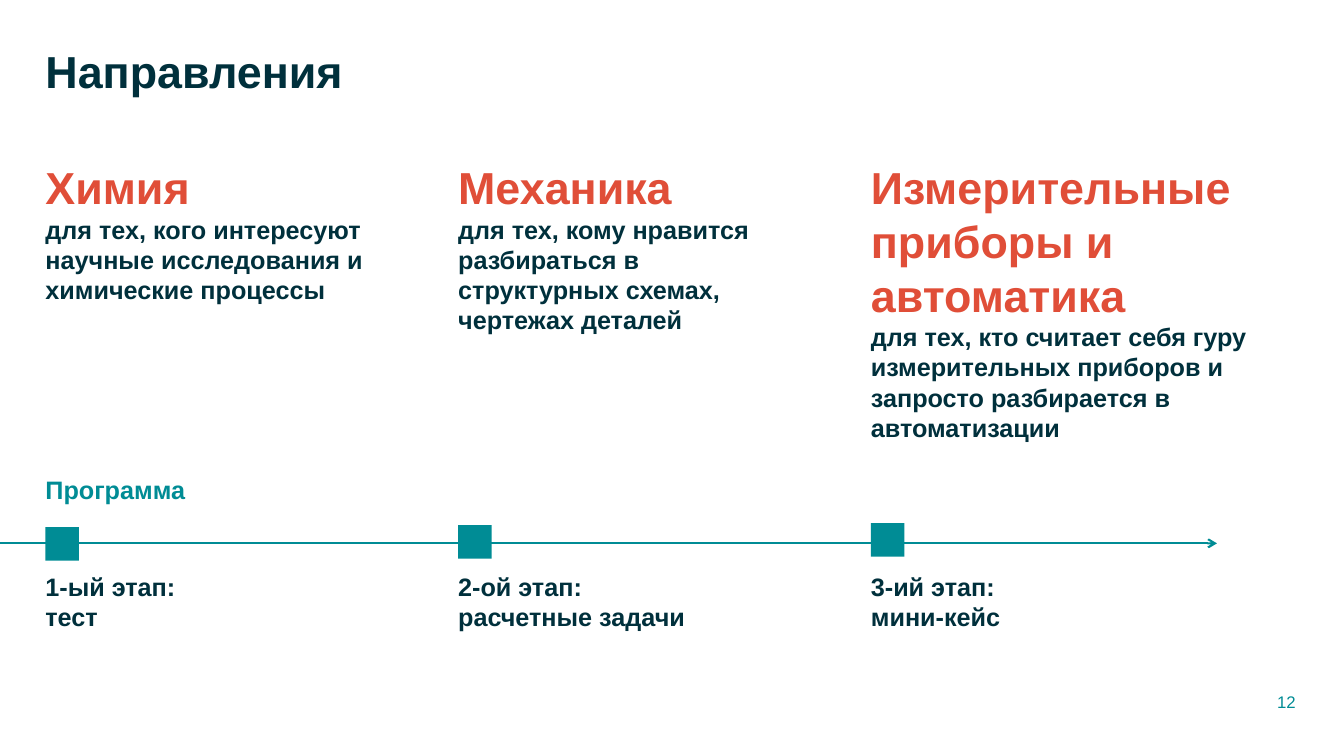
from dataclasses import dataclass

from lxml.etree import SubElement
from pptx import Presentation
from pptx.dml.color import RGBColor
from pptx.enum.shapes import MSO_CONNECTOR, MSO_SHAPE
from pptx.enum.text import MSO_ANCHOR, PP_ALIGN
from pptx.oxml.ns import qn
from pptx.slide import Slide
from pptx.util import Inches, Pt


@dataclass(frozen=True)
class Theme:
    font: str = "Arial"
    ink: RGBColor = RGBColor(0x00, 0x30, 0x3C)
    coral: RGBColor = RGBColor(0xE0, 0x4E, 0x38)
    teal: RGBColor = RGBColor(0x00, 0x8C, 0x95)
    heading: Pt = Pt(32)
    body: Pt = Pt(18)
    small: Pt = Pt(12)
    stroke: Pt = Pt(1.5)


@dataclass(frozen=True)
class Box:
    left: float
    top: float
    width: float
    height: float = 14.8


@dataclass(frozen=True)
class Line:
    text: str
    size: Pt
    color: RGBColor
    bold: bool = True


@dataclass(frozen=True)
class Track:
    subject: str
    audience: str
    stage: str
    task: str
    width: float


THEME = Theme()
SLIDE_WIDTH, SLIDE_HEIGHT = Inches(13.33), Inches(7.5)
MARGIN, COLUMN_STEP = 3.38, 30.71
NARROW, WIDE = 24.38, 31.58
TITLE_ROW, TRACK_ROW, PROGRAM_ROW, STAGE_ROW = 5.87, 20.53, 62.13, 74.93
AXIS_ROW, AXIS_END = 71.87, 90.55
MARKER_ROW, MARKER_RISE, MARKER_SIDE = 69.73, 0.27, 4.45

TRACKS = [
    Track("Химия",
          "для тех, кого интересуют научные исследования и химические процессы",
          "1-ый этап:", "тест", NARROW),
    Track("Механика",
          "для тех, кому нравится разбираться в структурных схемах, чертежах деталей",
          "2-ой этап:", "расчетные задачи", NARROW),
    Track("Измерительные приборы и автоматика",
          "для тех, кто считает себя гуру измерительных приборов "
          "и запросто разбирается в автоматизации",
          "3-ий этап:", "мини-кейс", WIDE),
]


def across(percent: float) -> int:
    return round(SLIDE_WIDTH * percent / 100)


def down(percent: float) -> int:
    return round(SLIDE_HEIGHT * percent / 100)


def write(slide: Slide, box: Box, lines: list[Line], frame_format: dict | None = None,
          paragraph_format: dict | None = None) -> None:
    frame = slide.shapes.add_textbox(
        across(box.left), down(box.top), across(box.width), down(box.height)).text_frame
    paragraph = frame.paragraphs[0]
    for name, value in ({"word_wrap": True, "margin_left": 0} | (frame_format or {})).items():
        setattr(frame, name, value)
    for name, value in (paragraph_format or {}).items():
        setattr(paragraph, name, value)
    for index, line in enumerate(lines):
        if index:
            paragraph.add_line_break()
        run = paragraph.add_run()
        run.text = line.text
        font_format = {"name": THEME.font, "size": line.size, "bold": line.bold}
        for name, value in font_format.items():
            setattr(run.font, name, value)
        run.font.color.rgb = line.color


def draw_axis(slide: Slide) -> None:
    axis = slide.shapes.add_connector(
        MSO_CONNECTOR.STRAIGHT, 0, down(AXIS_ROW), across(AXIS_END), down(AXIS_ROW))
    axis.line.color.rgb = THEME.teal
    axis.line.width = THEME.stroke
    SubElement(axis.line._get_or_add_ln(), qn("a:tailEnd"), type="arrow")
    SubElement(axis._element.spPr, qn("a:effectLst"))


def draw_marker(slide: Slide, left: float, top: float) -> None:
    side = down(MARKER_SIDE)
    marker = slide.shapes.add_shape(
        MSO_SHAPE.RECTANGLE, across(left), down(top), side, side)
    marker.shadow.inherit = False
    marker.fill.solid()
    marker.fill.fore_color.rgb = THEME.teal
    marker.line.fill.background()


def draw_track(slide: Slide, index: int, track: Track) -> None:
    left = MARGIN + COLUMN_STEP * index
    write(slide, Box(left, TRACK_ROW, track.width), [
        Line(track.subject, THEME.heading, THEME.coral),
        Line(track.audience, THEME.body, THEME.ink),
    ])
    draw_marker(slide, left, MARKER_ROW - MARKER_RISE * index)
    write(slide, Box(left, STAGE_ROW, track.width), [
        Line(text, THEME.body, THEME.ink) for text in (track.stage, track.task)
    ])


def main() -> None:
    deck = Presentation()
    deck.slide_width, deck.slide_height = SLIDE_WIDTH, SLIDE_HEIGHT
    slide = deck.slides.add_slide(deck.slide_layouts[6])
    write(slide, Box(MARGIN, TITLE_ROW, 80.8),
          [Line("Направления", THEME.heading, THEME.ink)],
          paragraph_format={"line_spacing": 0.9})
    draw_axis(slide)
    for index, track in enumerate(TRACKS):
        draw_track(slide, index, track)
    write(slide, Box(MARGIN, PROGRAM_ROW, NARROW),
          [Line("Программа", THEME.body, THEME.teal)])
    write(slide, Box(93.17, 91.47, 3.98, 2.67),
          [Line("12", THEME.small, THEME.teal, bold=False)],
          {"margin_left": Inches(0.1), "vertical_anchor": MSO_ANCHOR.MIDDLE},
          {"alignment": PP_ALIGN.RIGHT})
    deck.save("out.pptx")


if __name__ == "__main__":
    main()
